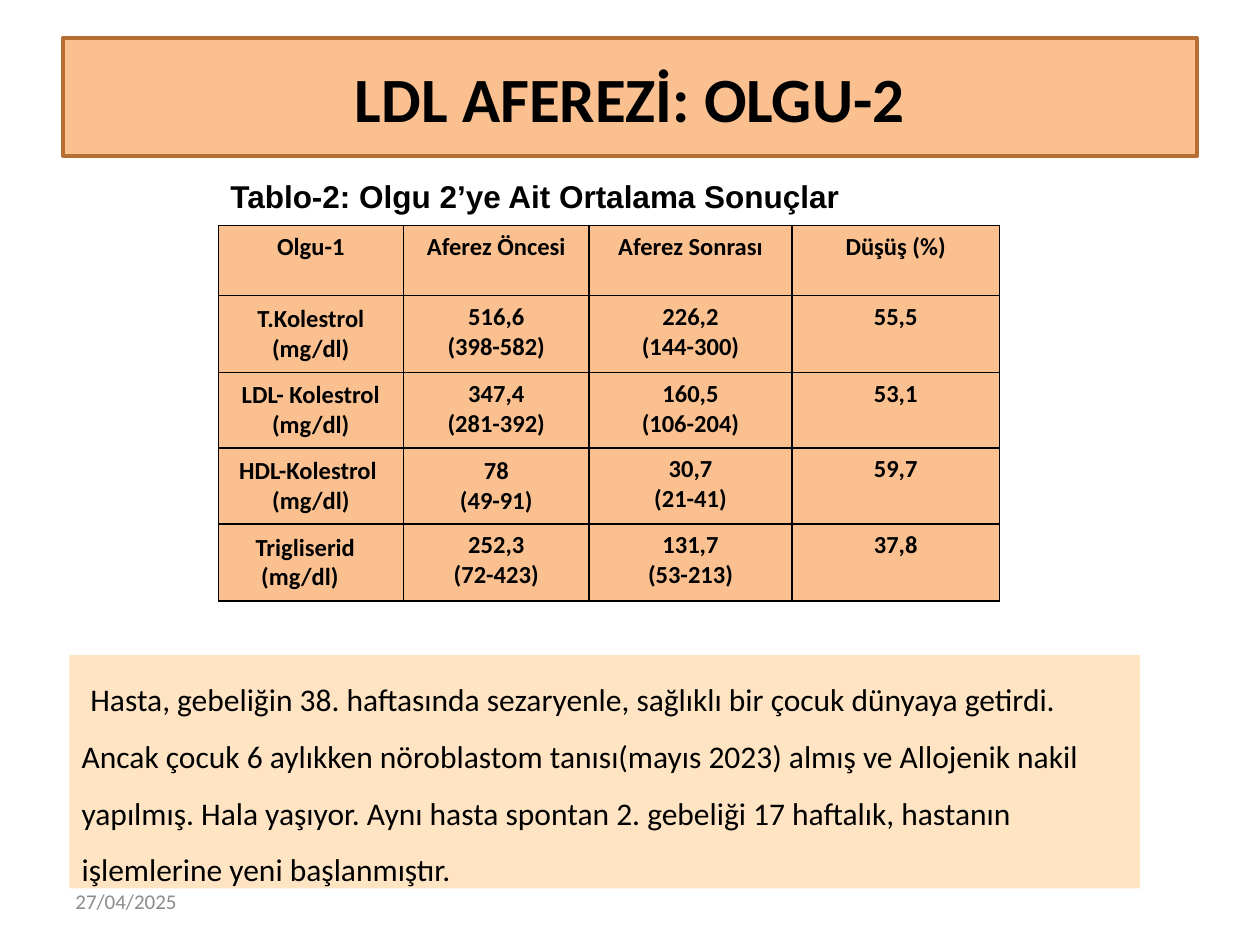
from dataclasses import dataclass

from lxml import etree
from pptx import Presentation
from pptx.dml.color import RGBColor
from pptx.enum.shapes import MSO_SHAPE
from pptx.enum.text import MSO_ANCHOR, PP_ALIGN
from pptx.oxml.ns import qn
from pptx.util import Pt

RECT = MSO_SHAPE.RECTANGLE
LEFT, CENTER = PP_ALIGN.LEFT, PP_ALIGN.CENTER
TOP, MIDDLE = MSO_ANCHOR.TOP, MSO_ANCHOR.MIDDLE


@dataclass(frozen=True)
class Theme:
    panel: str = "FAC090"
    panel_line: str = "B66E33"
    note: str = "FFE4C4"
    ink: str = "000000"
    muted: str = "8B8B8B"
    font: str = "Calibri"
    caption_font: str = "Arial"
    title: int = 36
    body: int = 18
    cell: int = 14
    date: int = 12


T = Theme()

COLS = [106, 106, 116, 118.5]
ROWS = [40, 44, 43, 43.5, 44]
RESULTS = [
    ["Olgu-1", "Aferez Öncesi", "Aferez Sonrası", "Düşüş (%)"],
    ["T.Kolestrol\n(mg/dl)", "516,6\n(398-582)", "226,2\n(144-300)", "55,5"],
    ["LDL- Kolestrol\n(mg/dl)", "347,4\n(281-392)", "160,5\n(106-204)", "53,1"],
    ["HDL-Kolestrol\n(mg/dl)", "78\n(49-91)", "30,7\n(21-41)", "59,7"],
    ["Trigliserid\n(mg/dl)", "252,3\n(72-423)", "131,7\n(53-213)", "37,8"],
]
# Left-aligned cells: indent of each line
INDENTS = {(3, 0): (6.3, 25.2), (4, 0): (15.7, 18.9)}
MIDDLE_CELLS = {(1, 0), (2, 0), (3, 0), (4, 0), (3, 1)}
NOTE = (
    "Hasta, gebeliğin 38. haftasında sezaryenle, sağlıklı bir çocuk dünyaya "
    "getirdi. Ancak çocuk 6 aylıkken nöroblastom tanısı(mayıs 2023) almış ve "
    "Allojenik nakil yapılmış. Hala yaşıyor. Aynı hasta spontan 2. gebeliği 17 "
    "haftalık, hastanın işlemlerine yeni başlanmıştır."
)


def write(tf, text, size, font=T.font, color=T.ink, bold=False, align=LEFT,
          spacing=None, first_indent=0, indents=None):
    """Fill a text frame, one paragraph per line of text."""
    tf.word_wrap = True
    for i, line in enumerate(text.split("\n")):
        p = tf.paragraphs[0] if i == 0 else tf.add_paragraph()
        p.alignment = align
        if spacing:
            p.line_spacing = spacing
        pPr = p._p.get_or_add_pPr()
        if indents:
            pPr.set("marL", str(Pt(indents[i])))
        if first_indent:
            pPr.set("indent", str(Pt(first_indent)))
        r = p.add_run()
        r.text = line
        r.font.name, r.font.size, r.font.bold = font, Pt(size), bold
        r.font.color.rgb = RGBColor.from_string(color)


def add_panel(s, box, fill, text, size, line=None, anchor=TOP, **fmt):
    sp = s.shapes.add_shape(RECT, *map(Pt, box))
    sp.shadow.inherit = False
    sp.fill.solid()
    sp.fill.fore_color.rgb = RGBColor.from_string(fill)
    if line:
        sp.line.color.rgb = RGBColor.from_string(line)
        sp.line.width = Pt(2)
    else:
        sp.line.fill.background()
    sp.text_frame.vertical_anchor = anchor
    write(sp.text_frame, text, size, **fmt)


def add_label(s, box, text, size, anchor=TOP, **fmt):
    tf = s.shapes.add_textbox(*map(Pt, box)).text_frame
    tf.vertical_anchor = anchor
    write(tf, text, size, **fmt)


def set_borders(cell, width=0.75):
    tcPr = cell._tc.get_or_add_tcPr()
    for i, side in enumerate(("a:lnL", "a:lnR", "a:lnT", "a:lnB")):
        ln = etree.Element(qn(side), w=str(Pt(width)))
        fill = etree.SubElement(ln, qn("a:solidFill"))
        etree.SubElement(fill, qn("a:srgbClr"), val=T.ink)
        tcPr.insert(i, ln)


def add_results(s, left, top):
    tbl = s.shapes.add_table(len(ROWS), len(COLS), Pt(left), Pt(top),
                             Pt(sum(COLS)), Pt(sum(ROWS))).table
    for col, width in zip(tbl.columns, COLS):
        col.width = Pt(width)
    for row, height in zip(tbl.rows, ROWS):
        row.height = Pt(height)
    for i, values in enumerate(RESULTS):
        for j, text in enumerate(values):
            cell = tbl.cell(i, j)
            cell.fill.solid()
            cell.fill.fore_color.rgb = RGBColor.from_string(T.panel)
            cell.margin_left = cell.margin_right = Pt(5.76)
            cell.vertical_anchor = MIDDLE if (i, j) in MIDDLE_CELLS else TOP
            indents = INDENTS.get((i, j))
            write(cell.text_frame, text, T.cell, bold=True, indents=indents,
                  align=LEFT if indents else CENTER)
            set_borders(cell)


def main():
    prs = Presentation()
    prs.slide_width, prs.slide_height = Pt(720), Pt(540)
    s = prs.slides.add_slide(prs.slide_layouts[6])
    add_panel(s, (36, 21.6, 648, 67.7), T.panel, "LDL AFEREZİ: OLGU-2", T.title,
              line=T.panel_line, anchor=MIDDLE, bold=True, align=CENTER)
    add_results(s, 124.6, 129)
    add_panel(s, (39.6, 374.4, 612, 133.2), T.note, NOTE, T.body,
              spacing=1.5, first_indent=5)
    add_label(s, (124.6, 97.9, 380, 31.7),
              "Tablo-2: Olgu 2’ye Ait Ortalama Sonuçlar", T.body,
              font=T.caption_font, bold=True)
    add_label(s, (36, 500.4, 168, 28.8), "27/04/2025", T.date,
              anchor=MIDDLE, color=T.muted)
    prs.save("out.pptx")


if __name__ == "__main__":
    main()
